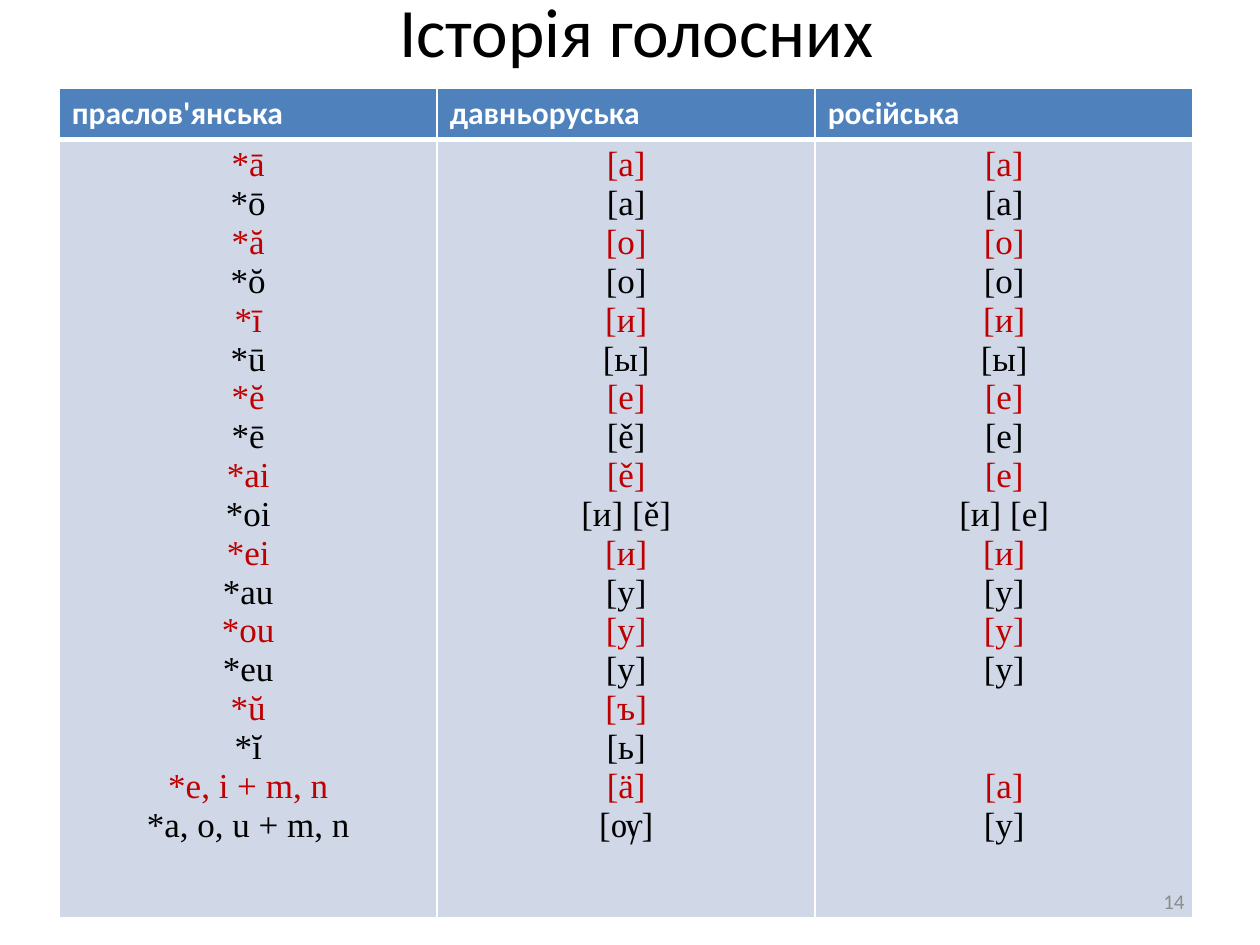
from lxml import etree
from pptx import Presentation
from pptx import util as u
from pptx.dml.color import RGBColor
from pptx.enum import text
from pptx.oxml.ns import qn

MID, LEFT, RIGHT = text.PP_ALIGN.CENTER, text.PP_ALIGN.LEFT, text.PP_ALIGN.RIGHT
LINE = 22.14  # height of one 20 pt line, in points


def write(p, words, size=20, font="Times New Roman", color="000000",
          bold=False, align=MID, before=0):
    p.alignment = align
    p.space_before = u.Pt(before)
    r = p.add_run()
    r.text = words
    r.font.size, r.font.name, r.font.bold = u.Pt(size), font, bold
    r.font.color.rgb = RGBColor.from_string(color)


def style_cell(cell, fill, bottom):
    pr = cell._tc.get_or_add_tcPr()
    for side, width in (("L", 1), ("R", 1), ("T", 1), ("B", bottom)):
        ln = etree.SubElement(pr, qn(f"a:ln{side}"), w=str(u.Pt(width)))
        solid = etree.SubElement(ln, qn("a:solidFill"))
        etree.SubElement(solid, qn("a:srgbClr"), val="FFFFFF")
    cell.fill.solid()
    cell.fill.fore_color.rgb = RGBColor.from_string(fill)


prs = Presentation()
prs.slide_width, prs.slide_height = u.Inches(10), u.Inches(7.5)
s = prs.slides.add_slide(prs.slide_layouts[6])

# Vowel table: one header row, one tall row holding a line per vowel
heads = ["праслов'янська", "давньоруська", "російська"]
vowels = [
    ("*ā", "[a]", "[a]"),
    ("*ō", "[a]", "[a]"),
    ("*ă", "[o]", "[o]"),
    ("*ŏ", "[o]", "[o]"),
    ("*ī", "[и]", "[и]"),
    ("*ū", "[ы]", "[ы]"),
    ("*ĕ", "[е]", "[е]"),
    ("*ē", "[ě]", "[е]"),
    ("*ai", "[ě]", "[е]"),
    ("*oi", "[и] [ě]", "[и] [е]"),
    ("*ei", "[и]", "[и]"),
    ("*au", "[у]", "[у]"),
    ("*ou", "[у]", "[у]"),
    ("*eu", "[у]", "[y]"),
    ("*ŭ", "[ъ]", None),
    ("*ĭ", "[ь]", None),
    ("*e, i + m, n", "[ä]", "[a]"),
    ("*a, o, u + m, n", "[ѹ]", "[y]"),
]
table = s.shapes.add_table(2, 3, u.Inches(0.47), u.Inches(0.7),
                           u.Inches(9), u.Inches(6.58)).table
table.rows[0].height, table.rows[1].height = u.Inches(0.4), u.Inches(6.18)

for col, head in enumerate(heads):
    top, body = table.cell(0, col), table.cell(1, col)
    style_cell(top, "4F81BD", 3)
    style_cell(body, "D0D8E8", 1)
    write(top.text_frame.paragraphs[0], head, size=18, font="Calibri",
          color="FFFFFF", bold=True, align=LEFT)
    tf, skipped = body.text_frame, 0
    for i, row in enumerate(vowels):
        if row[col] is None:  # a vowel without a reflex leaves a gap
            skipped += 1
            continue
        p = tf.add_paragraph() if i else tf.paragraphs[0]
        write(p, row[col], color="000000" if i % 2 else "C00000",
              before=skipped * LINE)
        skipped = 0

# Title and slide number
for words, box, size, color, align in (
        ("Історія голосних", (0.55, 0, 9, 0.48), 39.6, "000000", MID),
        ("14", (7.17, 6.95, 2.33, 0.4), 12, "8C8C8C", RIGHT)):
    tf = s.shapes.add_textbox(*map(u.Inches, box)).text_frame
    tf.word_wrap = True
    tf.vertical_anchor = text.MSO_ANCHOR.MIDDLE
    write(tf.paragraphs[0], words, size=size, font="Calibri", color=color,
          align=align)

prs.save("out.pptx")
